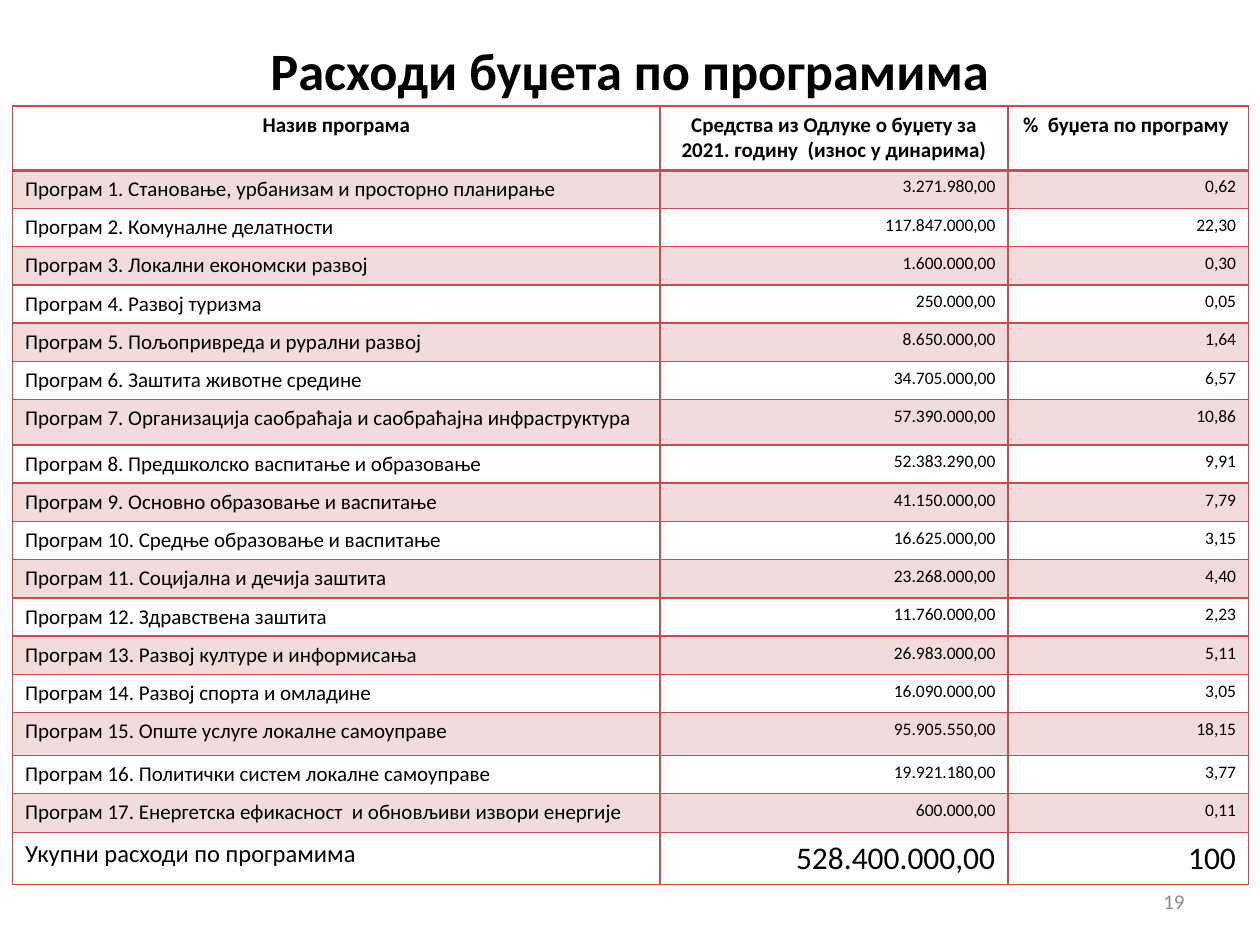
from dataclasses import dataclass

from lxml import etree
from pptx import Presentation
from pptx import util as u
from pptx.dml.color import RGBColor
from pptx.enum import text
from pptx.oxml import ns

WIDTH, HEIGHT = u.Inches(10), u.Inches(7.5)
FONT = "Calibri"
COLORS = {"ink": "000000", "muted": "8C8C8C", "border": "C0504D", "band": "F2DCDB", "plain": "FFFFFF"}
ALIGN = text.PP_ALIGN
COLUMN_WIDTHS = (5.14, 2.76, 1.91)
HEADER_HEIGHT, ROW_HEIGHT, TOTAL_HEIGHT = 0.51, 0.3, 0.41
TALLER_ROWS = {7: 0.36, 15: 0.34, 17: 0.31}


@dataclass
class Row:
    name: str
    amount: str
    share: str


HEADER = Row("Назив програма", "Средства из Одлуке о буџету за 2021. годину  (износ у динарима)", "%  буџета по програму ")
PROGRAMS = [
    Row("Становање, урбанизам и просторно планирање", "3.271.980,00", "0,62"),
    Row("Комуналне делатности", "117.847.000,00", "22,30"),
    Row("Локални економски развој", "1.600.000,00", "0,30"),
    Row("Развој туризма", "250.000,00", "0,05"),
    Row("Пољопривреда и рурални развој", "8.650.000,00", "1,64"),
    Row("Заштита животне средине", "34.705.000,00", "6,57"),
    Row("Организација саобраћаја и саобраћајна инфраструктура", "57.390.000,00", "10,86"),
    Row("Предшколско васпитање и образовање", "52.383.290,00", "9,91"),
    Row("Основно образовање и васпитање", "41.150.000,00", "7,79"),
    Row("Средње образовање и васпитање", "16.625.000,00", "3,15"),
    Row("Социјална и дечија заштита", "23.268.000,00", "4,40"),
    Row("Здравствена заштита", "11.760.000,00", "2,23"),
    Row("Развој културе и информисања", "26.983.000,00", "5,11"),
    Row("Развој спорта и омладине", "16.090.000,00", "3,05"),
    Row("Опште услуге локалне самоуправе", "95.905.550,00", "18,15"),
    Row("Политички систем локалне самоуправе", "19.921.180,00", "3,77"),
    Row("Енергетска ефикасност  и обновљиви извори енергије", "600.000,00", "0,11"),
]
TOTAL = Row("Укупни расходи по програмима", "528.400.000,00", "100")


def write(frame, content: str, size: float, align, color: str = "ink", bold: bool = False) -> None:
    frame.word_wrap = True
    paragraph = frame.paragraphs[0]
    paragraph.alignment = align
    run = paragraph.add_run()
    run.text = content
    run.font.name = FONT
    run.font.size = u.Pt(size)
    run.font.bold = bold
    run.font.color.rgb = RGBColor.from_string(COLORS[color])


def set_borders(cell, bottom: float, top: float) -> None:
    properties = cell._tc.get_or_add_tcPr()
    edges = {"lnL": 1, "lnR": 1, "lnT": top, "lnB": bottom}
    for index, (edge, points) in enumerate(edges.items()):
        line = etree.Element(ns.qn(f"a:{edge}"), w=str(u.Pt(points)))
        fill = etree.SubElement(line, ns.qn("a:solidFill"))
        etree.SubElement(fill, ns.qn("a:srgbClr"), val=COLORS["border"])
        properties.insert(index, line)


def fill_row(table, index: int, row: Row, sizes: tuple, height: float, fill: str = "plain") -> None:
    header = index == 0
    table.rows[index].height = u.Inches(height)
    aligns = (ALIGN.CENTER,) * 3 if header else (ALIGN.LEFT, ALIGN.RIGHT, ALIGN.RIGHT)
    for column, content in enumerate((row.name, row.amount, row.share)):
        cell = table.cell(index, column)
        cell.fill.solid()
        cell.fill.fore_color.rgb = RGBColor.from_string(COLORS[fill])
        write(cell.text_frame, content, sizes[column], aligns[column], bold=header)
        set_borders(cell, bottom=2 if header else 1, top=2 if index == 1 else 1)


def add_budget_table(slide) -> None:
    last = len(PROGRAMS) + 1
    shape = slide.shapes.add_table(last + 1, 3, int(WIDTH * 0.01), u.Inches(0.84),
                                   u.Inches(sum(COLUMN_WIDTHS)), u.Inches(6.11))
    table = shape.table
    table.first_row = table.horz_banding = False
    for column, width in zip(table.columns, COLUMN_WIDTHS):
        column.width = u.Inches(width)
    fill_row(table, 0, HEADER, (12, 12, 12), HEADER_HEIGHT)
    for number, program in enumerate(PROGRAMS, 1):
        row = Row(f"Програм {number}. {program.name}", program.amount, program.share)
        fill_row(table, number, row, (12, 10, 10), TALLER_ROWS.get(number, ROW_HEIGHT),
                 "band" if number % 2 else "plain")
    fill_row(table, last, TOTAL, (14, 18, 18), TOTAL_HEIGHT)


def main() -> None:
    presentation = Presentation()
    presentation.slide_width, presentation.slide_height = WIDTH, HEIGHT
    slide = presentation.slides.add_slide(presentation.slide_layouts[5])

    title = slide.shapes.title
    title.left, title.top, title.width, title.height = map(u.Inches, (0.74, 0.13, 8.52, 0.85))
    title.text_frame.vertical_anchor = text.MSO_ANCHOR.MIDDLE
    write(title.text_frame, "Расходи буџета по програмима", 30, ALIGN.CENTER, bold=True)

    add_budget_table(slide)

    page = slide.shapes.add_textbox(*map(u.Inches, (7.17, 6.95, 2.33, 0.4)))
    page.text_frame.vertical_anchor = text.MSO_ANCHOR.MIDDLE
    write(page.text_frame, "19", 12, ALIGN.RIGHT, "muted")

    presentation.save("out.pptx")


if __name__ == "__main__":
    main()
